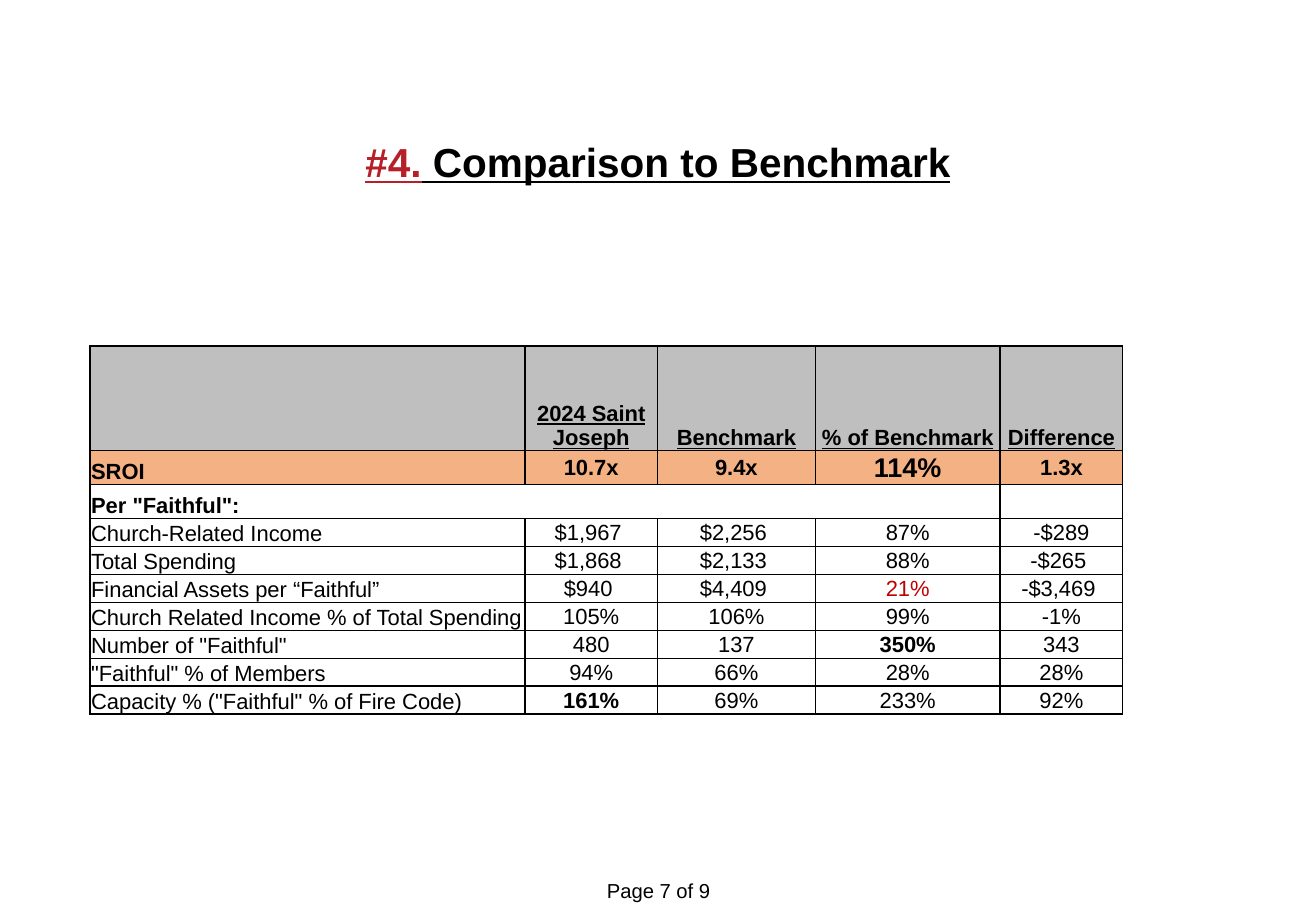
from lxml.etree import SubElement
from pptx import Presentation
from pptx.dml.color import RGBColor
from pptx.enum.text import MSO_ANCHOR, MSO_AUTO_SIZE, PP_ALIGN
from pptx.oxml.ns import qn
from pptx.util import Inches, Pt

FONT = "Arial"
COLORS = {"black": "000000", "title_red": "B62029", "low_red": "C00000",
          "header": "BFBFBF", "sroi": "F4B183", "white": "FFFFFF"}
COLUMN_WIDTHS = [3.58, 1.09, 1.3, 1.52, 1.01]
ROW_HEIGHTS = [0.86, 0.28, 0.28] + [0.23] * 7
HEADER_ROW, SROI_ROW, SECTION_ROW = 0, 1, 2
ROWS = [
    ["", "2024 Saint Joseph", "Benchmark", "% of Benchmark", "Difference"],
    ["SROI", "10.7x", "9.4x", "114%", "1.3x"],
    ['Per "Faithful":', "", "", "", ""],
    ["Church-Related Income", "$1,967 ", "$2,256 ", "87%", "-$289"],
    ["Total Spending", "$1,868 ", "$2,133 ", "88%", "-$265 "],
    ["Financial Assets per “Faithful”", "$940 ", "$4,409 ", "21%", "-$3,469 "],
    ["Church Related Income % of Total Spending", "105%", "106%", "99%", "-1%"],
    ['Number of "Faithful"', "480", "137", "350%", "343"],
    ['"Faithful" % of Members', "94%", "66%", "28%", "28%"],
    ['Capacity % ("Faithful" % of Fire Code)', "161%", "69%", "233%", "92%"],
]
BOLD_VALUES = {"350%", "161%"}
LARGE_VALUE = "114%"
LOW_VALUE = "21%"


def rgb(name):
    """Return a named colour."""
    return RGBColor.from_string(COLORS[name])


def style_font(font, size, color="black", bold=False, underline=False):
    """Set the look of a font."""
    font.name, font.size = FONT, Pt(size)
    font.bold, font.underline = bold, underline
    font.color.rgb = rgb(color)


def add_title(slide, parts):
    """Place the title and colour each of its parts."""
    title = slide.shapes.title
    title.left, title.top = Inches(0.39), Inches(1.13)
    title.width, title.height = Inches(10.05), Inches(1.05)
    frame = title.text_frame
    frame.margin_left = frame.margin_right = frame.margin_top = frame.margin_bottom = 0
    frame.vertical_anchor = MSO_ANCHOR.TOP
    frame.auto_size = MSO_AUTO_SIZE.NONE
    paragraph = frame.paragraphs[0]
    paragraph.alignment = PP_ALIGN.CENTER
    style_font(paragraph.font, 24, bold=True, underline=True)
    for text, color in parts:
        run = paragraph.add_run()
        run.text = text
        run.font.color.rgb = rgb(color)


def add_page_label(slide, text):
    """Add the centred page label at the foot."""
    box = slide.shapes.add_textbox(Inches(4.67), Inches(7.18), Inches(1.5), Inches(0.3))
    frame = box.text_frame
    frame.word_wrap = True
    paragraph = frame.paragraphs[0]
    paragraph.text = text
    paragraph.alignment = PP_ALIGN.CENTER
    style_font(paragraph.font, 12)


def add_border(cell, side, points):
    """Draw one side of a cell, or hide it when points is zero."""
    line = SubElement(cell._tc.get_or_add_tcPr(), qn(f"a:ln{side}"), w=str(Pt(points)))
    if points:
        fill = SubElement(line, qn("a:solidFill"))
        SubElement(fill, qn("a:srgbClr"), val=COLORS["black"])
    else:
        SubElement(line, qn("a:noFill"))


def border_cell(cell, row, column):
    """Give a cell its borders: thin around the section row, open inside it."""
    section = row == SECTION_ROW
    thin_rows = (SROI_ROW, SECTION_ROW)
    add_border(cell, "L", 0 if section and 0 < column < 4 else 1)
    add_border(cell, "R", 0 if section and column < 3 else 1)
    add_border(cell, "T", 0.5 if row - 1 in thin_rows else 1)
    add_border(cell, "B", 0.5 if row in thin_rows else 1)


def fill_cell(cell, row, column, text):
    """Write and format one table cell."""
    border_cell(cell, row, column)
    cell.fill.solid()
    cell.fill.fore_color.rgb = rgb({HEADER_ROW: "header", SROI_ROW: "sroi"}.get(row, "white"))
    cell.margin_left = cell.margin_right = cell.margin_top = Inches(0.01)
    cell.margin_bottom = 0
    at_bottom = row == HEADER_ROW or column == 0
    cell.vertical_anchor = MSO_ANCHOR.BOTTOM if at_bottom else MSO_ANCHOR.MIDDLE
    paragraph = cell.text_frame.paragraphs[0]
    paragraph.alignment = PP_ALIGN.LEFT if column == 0 else PP_ALIGN.CENTER
    if not text:
        SubElement(paragraph._p, qn("a:endParaRPr"), sz="1300")
        return
    paragraph.text = text
    style_font(paragraph.font, 16 if text == LARGE_VALUE else 13,
               color="low_red" if text == LOW_VALUE else "black",
               bold=row <= SECTION_ROW or text in BOLD_VALUES,
               underline=row == HEADER_ROW)


def add_benchmark_table(slide):
    """Add the table that compares the parish with the benchmark."""
    frame = slide.shapes.add_table(len(ROWS), len(COLUMN_WIDTHS), Inches(0.74), Inches(2.85),
                                   Inches(sum(COLUMN_WIDTHS)), Inches(sum(ROW_HEIGHTS)))
    table = frame.table
    table.first_row = table.horz_banding = False
    for column, width in zip(table.columns, COLUMN_WIDTHS):
        column.width = Inches(width)
    for row, height in zip(table.rows, ROW_HEIGHTS):
        row.height = Inches(height)
    for row, texts in enumerate(ROWS):
        for column, text in enumerate(texts):
            fill_cell(table.cell(row, column), row, column, text)


def main():
    """Build and save the benchmark slide."""
    presentation = Presentation()
    presentation.slide_width, presentation.slide_height = Inches(10.83), Inches(7.5)
    slide = presentation.slides.add_slide(presentation.slide_layouts[5])
    add_title(slide, [("#4.", "title_red"), (" Comparison to Benchmark", "black")])
    add_page_label(slide, "Page 7 of 9")
    add_benchmark_table(slide)
    presentation.save("out.pptx")


if __name__ == "__main__":
    main()
